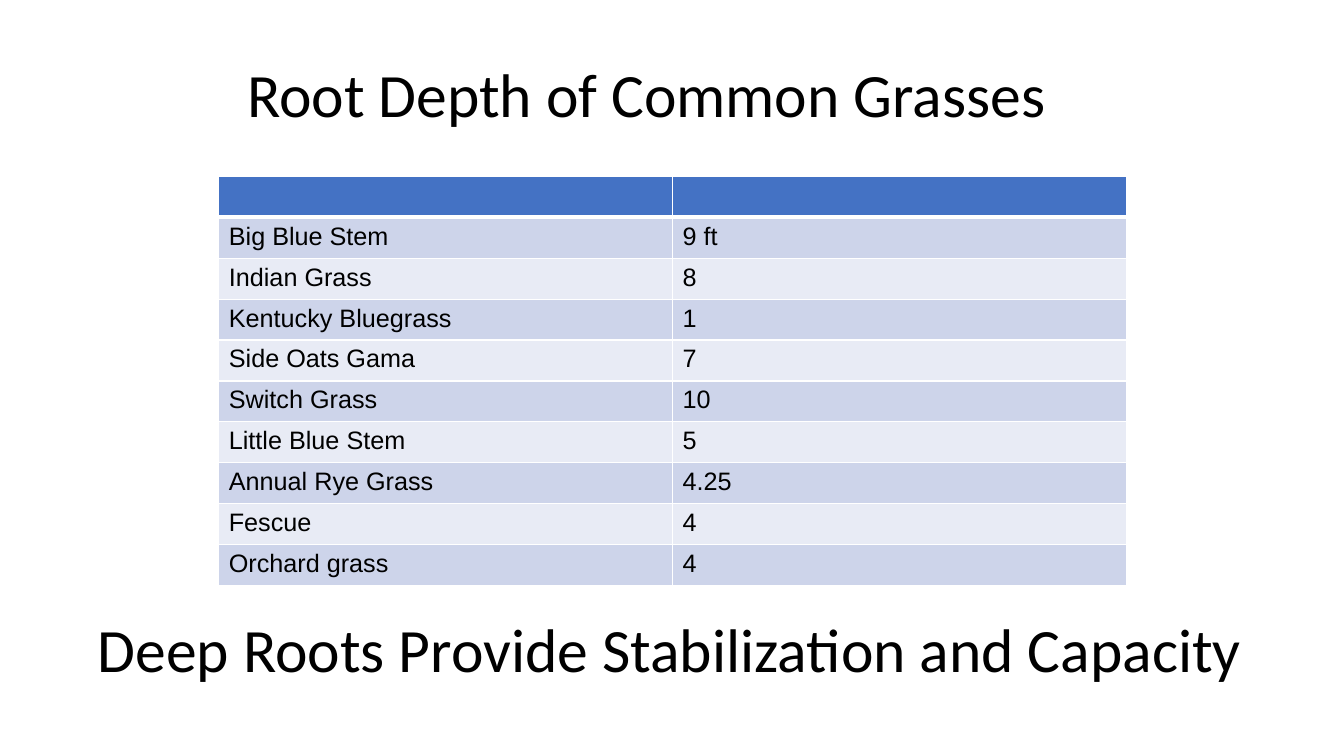
import pptx
import pptx.util
import pptx.dml.color
import pptx.enum.text
import pptx.oxml
import pptx.oxml.ns

Inches = pptx.util.Inches
HUES = {"text": "000000", "head": "4472C4", "dark": "CDD4EA",
        "light": "E8EBF5", "rule": "FFFFFF"}
ROWS = [("", ""), ("Big Blue Stem", "9 ft"), ("Indian Grass", "8"),
        ("Kentucky Bluegrass", "1"), ("Side Oats Gama", "7"),
        ("Switch Grass", "10"), ("Little Blue Stem", "5"),
        ("Annual Rye Grass", "4.25"), ("Fescue", "4"), ("Orchard grass", "4")]


def color(name):
    """Return the named colour."""
    return pptx.dml.color.RGBColor.from_string(HUES[name])


def write(frame, text, size=18, font="Arial", hue="text", space=None):
    """Put formatted, left-aligned text into a frame."""
    para = frame.paragraphs[0]
    para.alignment = pptx.enum.text.PP_ALIGN.LEFT
    para.line_spacing = space
    para.font.size = pptx.util.Pt(size)
    if text:
        run = para.add_run()
        run.text = text
        run.font.size = pptx.util.Pt(size)
        run.font.name = font
        run.font.color.rgb = color(hue)


def edge(cell, base):
    """Draw the cell's four borders, with the given base width."""
    props = cell._tc.get_or_add_tcPr()
    space = pptx.oxml.ns.nsdecls("a")
    for i, (side, width) in enumerate(zip("LRTB", (1, 1, 1, base))):
        line = pptx.oxml.parse_xml(
            f'<a:ln{side} {space} w="{pptx.util.Pt(width)}"><a:solidFill>'
            f'<a:srgbClr val="{HUES["rule"]}"/></a:solidFill></a:ln{side}>')
        props.insert(i, line)


def banner(shape, box, text):
    """Place a large heading in the box."""
    shape.left, shape.top, shape.width, shape.height = map(Inches, box)
    frame = shape.text_frame
    frame.word_wrap = True
    frame.auto_size = pptx.enum.text.MSO_AUTO_SIZE.NONE
    frame.vertical_anchor = pptx.enum.text.MSO_ANCHOR.MIDDLE
    write(frame, text, size=44, font="Calibri", space=0.9)


def grid(slide, box, rows):
    """Build the banded table of root depths in the box."""
    table = slide.shapes.add_table(
        len(rows), len(rows[0]), *map(Inches, box)).table
    for r, row in enumerate(rows):
        band = "head" if r == 0 else "dark" if r % 2 else "light"
        for c, text in enumerate(row):
            cell = table.cell(r, c)
            cell.fill.solid()
            cell.fill.fore_color.rgb = color(band)
            edge(cell, 1 if r else 3)
            write(cell.text_frame, text)


def main():
    """Build and save the slide."""
    deck = pptx.Presentation()
    deck.slide_width, deck.slide_height = Inches(13.33), Inches(7.5)
    slide = deck.slides.add_slide(deck.slide_layouts[5])
    banner(slide.shapes.title, (2.35, 0.24, 8.48, 1.45),
           "Root Depth of Common Grasses")
    grid(slide, (2.17, 1.75, 9, 4.06), ROWS)
    foot = (0.87, 5.75, 11.74, 1.45)
    banner(slide.shapes.add_textbox(*map(Inches, foot)), foot,
           "Deep Roots Provide Stabilization and Capacity")
    deck.save("out.pptx")


if __name__ == "__main__":
    main()
